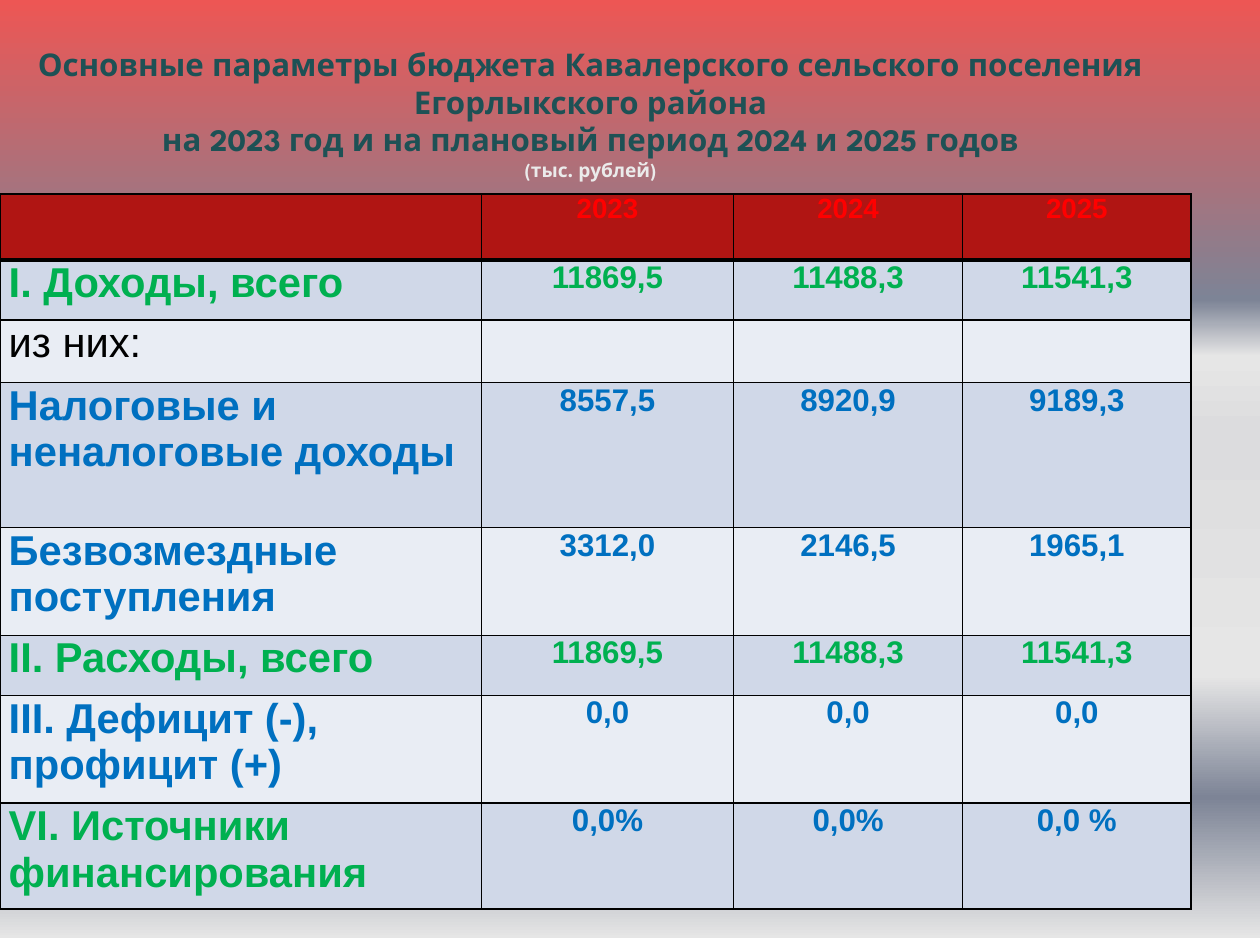
from dataclasses import dataclass

from lxml import etree
from pptx import Presentation, oxml, util as u
from pptx.dml.color import RGBColor
from pptx.enum import text
from pptx.oxml.ns import qn


@dataclass(frozen=True)
class Theme:
    title_font: str = "League Spartan"
    table_font: str = "Arial"
    title: str = "1E5155"
    unit: str = "EBEBEB"
    year: str = "FF0000"
    total: str = "00B050"
    item: str = "0070C0"
    plain: str = "000000"
    border: str = "000000"
    header: str = "B01513"
    bands: tuple[str, str] = ("D0D8E8", "E9EDF4")
    title_size: int = 18
    unit_size: int = 11
    year_size: int = 16
    label_size: int = 24
    value_size: int = 18
    stops: tuple[tuple[int, str], ...] = (
        (0, "ED5654"), (32, "7D8496"), (38, "E6E6E6"), (46, "DCDCDE"),
        (72, "E6E6E6"), (85, "7D8496"), (100, "E6E6E6"))


T = Theme()


@dataclass(frozen=True)
class Row:
    height: float
    label: str
    values: tuple[str, ...]
    color: str
    value_color: str = ""
    bold: bool = True
    value_size: int = T.value_size


TITLE = ("Основные параметры бюджета Кавалерского сельского поселения Егорлыкского района",
         "на 2023 год и на плановый период 2024 и 2025 годов")
UNIT = "(тыс. рублей)"
COL_WIDTHS = (3.85, 2.02, 1.83, 1.83)
ROWS = (
    Row(0.53, "", ("2023", "2024", "2025"), T.year, value_size=T.year_size),
    Row(0.48, "I. Доходы, всего", ("11869,5", "11488,3", "11541,3"), T.total),
    Row(0.5, "из них:", ("", "", ""), T.plain, bold=False),
    Row(1.16, "Налоговые и неналоговые доходы", ("8557,5", "8920,9", "9189,3"), T.item),
    Row(0.86, "Безвозмездные поступления", ("3312,0", "2146,5", "1965,1"), T.item),
    Row(0.48, "II. Расходы, всего", ("11869,5", "11488,3", "11541,3"), T.total),
    Row(0.86, "III. Дефицит (-), профицит (+)", ("0,0", "0,0", "0,0"), T.item),
    Row(0.85, "VI. Источники финансирования", ("0,0%", "0,0%", "0,0 %"), T.total, T.item),
)


def set_attrs(obj, **values) -> None:
    for name, value in values.items():
        setattr(obj, name, value)


def add_run(p, words: str, font: str, size: int, color: str, bold: bool = True) -> None:
    r = p.add_run()
    r.text = words
    set_attrs(r.font, name=font, size=u.Pt(size), bold=bold)
    r.font.color.rgb = RGBColor.from_string(color)


def paint_background(s) -> None:
    fill = s.background.fill
    fill.gradient()
    fill.gradient_angle = 270  # counter-clockwise, so colours run from top to bottom
    stops = next(s.element.iter(qn("a:gsLst")))
    for gs in list(stops):
        stops.remove(gs)
    for percent, color in T.stops:
        gs = etree.SubElement(stops, qn("a:gs"), pos=str(percent * 1000))
        etree.SubElement(gs, qn("a:srgbClr"), val=color)


def add_title(s) -> None:
    sp = s.shapes.add_textbox(u.Inches(0), u.Inches(0.28), u.Inches(9.45), u.Inches(1.25))
    tf = sp.text_frame
    set_attrs(tf, word_wrap=True, vertical_anchor=text.MSO_ANCHOR.MIDDLE)
    p = tf.paragraphs[0]
    p.alignment = text.PP_ALIGN.CENTER
    for line in TITLE:
        add_run(p, line, T.title_font, T.title_size, T.title)
        p.add_line_break()
    add_run(p, UNIT, T.title_font, T.unit_size, T.unit)


def set_border(cell, side: str, points: int) -> None:
    ln = etree.SubElement(cell._tc.get_or_add_tcPr(), qn(f"a:ln{side}"), w=str(u.Pt(points)))
    fill = etree.SubElement(ln, qn("a:solidFill"))
    etree.SubElement(fill, qn("a:srgbClr"), val=T.border)


def fill_cell(cell, row: Row, i: int, j: int) -> None:
    heavy = {(0, "B"), (1, "T")}
    for side in "LRTB":
        set_border(cell, side, 3 if (i, side) in heavy else 1)
    cell.fill.solid()
    color = T.bands[(i - 1) % 2] if i else T.header
    cell.fill.fore_color.rgb = RGBColor.from_string(color)
    set_attrs(cell, margin_left=u.Inches(0.07), margin_right=u.Inches(0.07),
              margin_top=0, margin_bottom=0)
    p = cell.text_frame.paragraphs[0]
    words = row.values[j - 1] if j else row.label
    if not words:
        return
    if j:
        p.alignment = text.PP_ALIGN.CENTER
        add_run(p, words, T.table_font, row.value_size, row.value_color or row.color, row.bold)
    else:
        add_run(p, words, T.table_font, T.label_size, row.color, row.bold)


def add_budget_table(s) -> None:
    frame = s.shapes.add_table(len(ROWS), len(COL_WIDTHS), u.Inches(0), u.Inches(1.55),
                               u.Inches(sum(COL_WIDTHS)), u.Inches(sum(r.height for r in ROWS)))
    table = frame.table
    for column, width in zip(table.columns, COL_WIDTHS):
        column.width = u.Inches(width)
    for i, row in enumerate(ROWS):
        table.rows[i].height = u.Inches(row.height)
        for j in range(len(COL_WIDTHS)):
            fill_cell(table.cell(i, j), row, i, j)


def main() -> None:
    prs = Presentation()
    set_attrs(prs, slide_width=u.Inches(10.08), slide_height=u.Inches(7.5))
    s = prs.slides.add_slide(prs.slide_layouts[6])
    paint_background(s)
    add_title(s)
    add_budget_table(s)
    prs.save("out.pptx")


if __name__ == "__main__":
    main()
